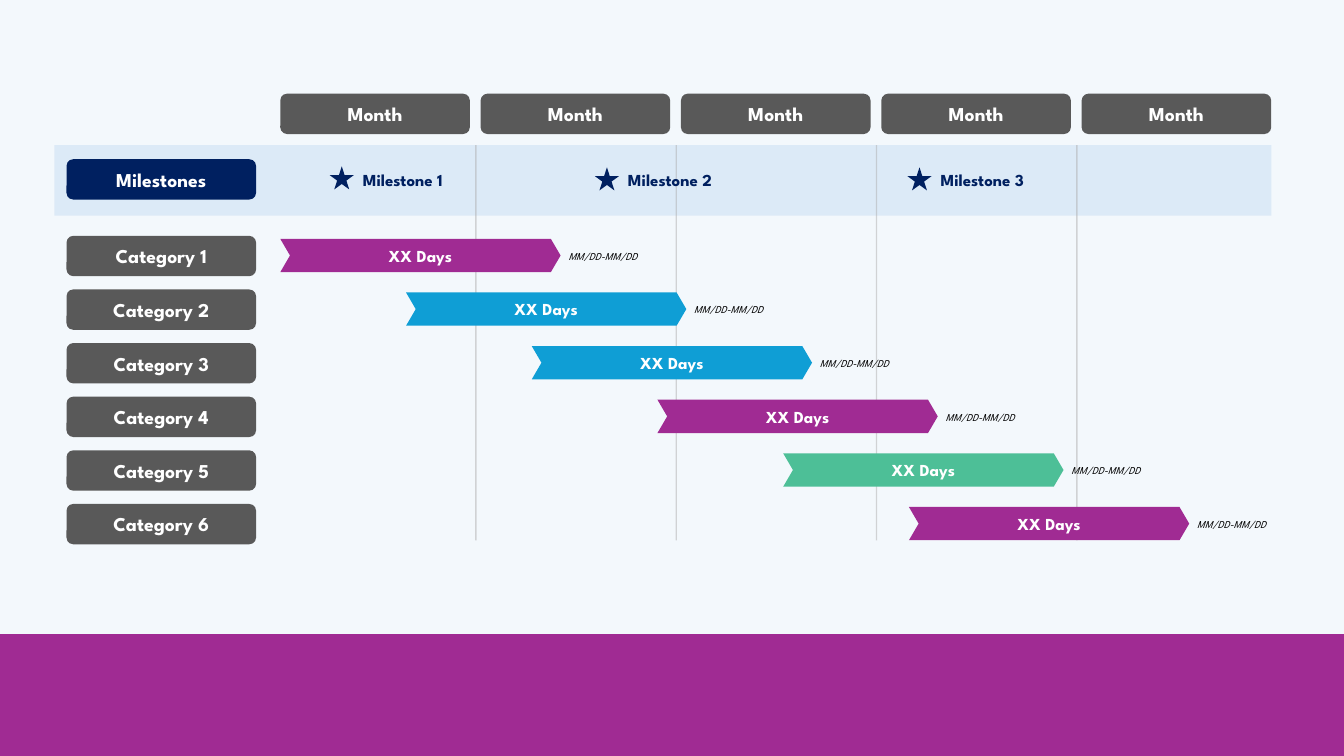
from dataclasses import dataclass

from lxml.etree import SubElement
from pptx import Presentation
from pptx.dml.color import RGBColor
from pptx.enum.shapes import MSO_CONNECTOR, MSO_SHAPE as Preset
from pptx.enum.text import MSO_ANCHOR as Anchor, MSO_AUTO_SIZE as AutoSize, PP_ALIGN as Align
from pptx.oxml.ns import qn
from pptx.util import Inches, Pt

MONTHS = ["Month"] * 5
MILESTONES = [("Milestone 1", 3.27, 1.65), ("Milestone 2", 5.9, 1.66), ("Milestone 3", 9, 1.66)]
CATEGORIES = [
    ("Category 1", "XX Days", "MM/DD-MM/DD", "purple"),
    ("Category 2", "XX Days", "MM/DD-MM/DD", "blue"),
    ("Category 3", "XX Days", "MM/DD-MM/DD", "blue"),
    ("Category 4", "XX Days", "MM/DD-MM/DD", "purple"),
    ("Category 5", "XX Days", "MM/DD-MM/DD", "green"),
    ("Category 6", "XX Days", "MM/DD-MM/DD", "purple"),
]


@dataclass(frozen=True)
class Theme:
    """Colours, font and type sizes of the timeline."""
    font: str = "League Spartan"
    background: str = "F3F8FC"
    band: str = "DCEAF7"
    grey: str = "595959"
    navy: str = "002060"
    purple: str = "A02B93"
    blue: str = "0F9ED5"
    green: str = "4DBF97"
    rule: str = "AEAEAE"
    white: str = "FFFFFF"
    black: str = "000000"
    label_size: float = 14
    bar_size: float = 12
    date_size: float = 7.5


THEME = Theme()
LABEL_WIDTH, LABEL_HEIGHT = 1.88, 0.4
LABEL_LEFT, MONTH_LEFT, MONTH_TOP, MONTH_STEP = 0.66, 2.78, 0.93, 1.987
BAND_LEFT, BAND_TOP, BAND_WIDTH, BAND_HEIGHT = 0.54, 1.44, 12.07, 0.7
ROW_TOP, ROW_STEP = 2.34, 0.532
BAR_WIDTH, BAR_HEIGHT, BAR_STEP = 2.78, 0.33, 1.247
RULE_LEFT, RULE_BOTTOM = 4.72, 5.36


def write(shape, text, size, color, align=Align.CENTER, anchor=Anchor.MIDDLE, bold=True, italic=False):
    frame = shape.text_frame
    frame.word_wrap = True
    frame.vertical_anchor = anchor
    frame.text = text
    paragraph = frame.paragraphs[0]
    paragraph.alignment = align
    font = paragraph.runs[0].font
    font.name, font.size, font.bold, font.italic = THEME.font, Pt(size), bold, italic
    font.color.rgb = RGBColor.from_string(color)


def add_block(slide, preset, left, top, width, height, color, adjustment=None):
    block = slide.shapes.add_shape(preset, Inches(left), Inches(top), Inches(width), Inches(height))
    block.shadow.inherit = False
    block.fill.solid()
    block.fill.fore_color.rgb = RGBColor.from_string(color)
    block.line.fill.background()
    if adjustment is not None:
        block.adjustments[0] = adjustment
    return block


def add_label(slide, text, left, top, color):
    label = add_block(slide, Preset.ROUNDED_RECTANGLE, left, top, LABEL_WIDTH, LABEL_HEIGHT, color, 0.167)
    write(label, text, THEME.label_size, THEME.white)


def add_caption(slide, text, left, top, width, height, size, color, **style):
    caption = slide.shapes.add_textbox(Inches(left), Inches(top), Inches(width), Inches(height))
    write(caption, text, size, color, align=Align.LEFT, **style)
    caption.text_frame.auto_size = AutoSize.SHAPE_TO_FIT_TEXT


def add_month_rule(slide, x):
    rule = slide.shapes.add_connector(
        MSO_CONNECTOR.STRAIGHT, Inches(x), Inches(BAND_TOP), Inches(x), Inches(RULE_BOTTOM))
    rule.line.width = Pt(1)
    rule.line.color.rgb = RGBColor.from_string(THEME.rule)
    properties = rule.element.spPr
    SubElement(properties.find(".//" + qn("a:srgbClr")), qn("a:alpha"), val="50000")
    SubElement(properties, qn("a:effectLst"))


def add_category(slide, index, name, days, dates, color):
    top = ROW_TOP + index * ROW_STEP
    bar_left = MONTH_LEFT + index * BAR_STEP
    add_caption(slide, dates, bar_left + BAR_WIDTH - 0.02, top + 0.08, 1.31, 0.24,
                THEME.date_size, THEME.black, bold=False, italic=True)
    bar = add_block(slide, Preset.CHEVRON, bar_left, top + 0.03, BAR_WIDTH, BAR_HEIGHT,
                    getattr(THEME, color), 0.292)
    write(bar, days, THEME.bar_size, THEME.white)
    add_label(slide, name, LABEL_LEFT, top, THEME.grey)


def main():
    """Build the milestone timeline slide."""
    deck = Presentation()
    deck.slide_width, deck.slide_height = Inches(13.33), Inches(7.5)
    slide = deck.slides.add_slide(deck.slide_layouts[6])
    slide.background.fill.solid()
    slide.background.fill.fore_color.rgb = RGBColor.from_string(THEME.background)

    add_block(slide, Preset.RECTANGLE, BAND_LEFT, BAND_TOP, BAND_WIDTH, BAND_HEIGHT, THEME.band)
    for index in range(len(MONTHS) - 1):
        add_month_rule(slide, RULE_LEFT + index * MONTH_STEP)
    for index, month in enumerate(MONTHS):
        add_label(slide, month, MONTH_LEFT + index * MONTH_STEP, MONTH_TOP, THEME.grey)
    for index, category in enumerate(CATEGORIES):
        add_category(slide, index, *category)
    add_label(slide, "Milestones", LABEL_LEFT, 1.58, THEME.navy)
    for name, left, top in MILESTONES:
        add_block(slide, Preset.STAR_5_POINT, left, top, 0.24, 0.23, THEME.navy)
        add_caption(slide, name, left + 0.23, 1.63, 1.12, 0.3, THEME.bar_size, THEME.navy, anchor=Anchor.TOP)
    add_block(slide, Preset.RECTANGLE, 0, 6.29, 13.33, 1.21, THEME.purple)
    deck.save("out.pptx")


if __name__ == "__main__":
    main()
